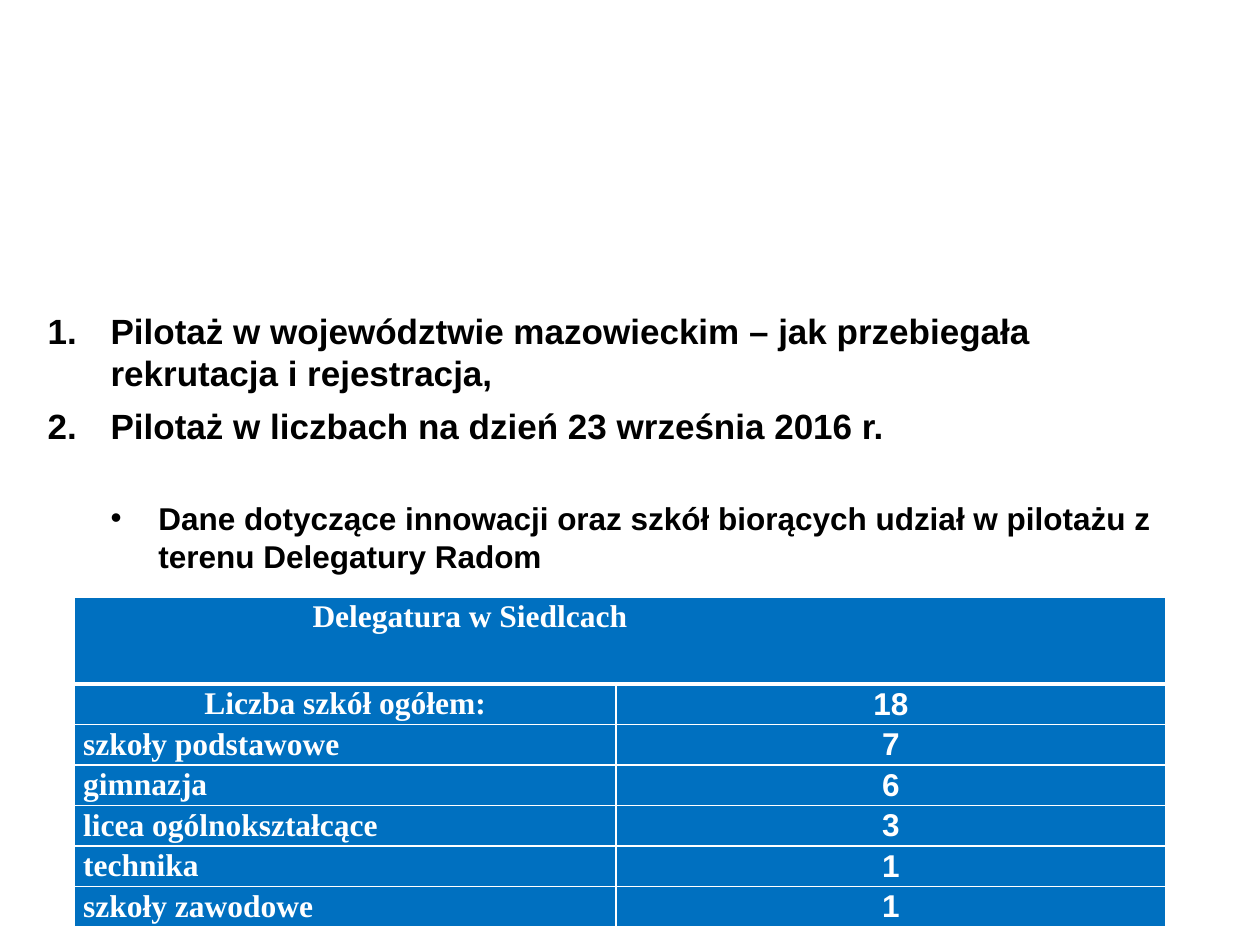
import pptx
import pptx.util
from lxml import etree
from pptx.dml.color import RGBColor
from pptx.enum.text import PP_ALIGN
from pptx.oxml.ns import qn
from pptx.util import Inches, Pt

BLACK = RGBColor(0x00, 0x00, 0x00)
WHITE = RGBColor(0xFF, 0xFF, 0xFF)
BLUE = RGBColor(0x00, 0x70, 0xC0)
SANS, SERIF = "Arial", "Times New Roman"


class SlideBuilder:
    def __init__(self, slide):
        self.slide = slide

    def add_text(self, paragraph, text, color, font, spacing):
        run = paragraph.add_run()
        run.text = text
        run.font.color.rgb = color
        for target, values in ((paragraph, spacing), (run.font, font)):
            for name, value in values.items():
                setattr(target, name, value)

    def agenda(self, left, top, width, height, items):
        frame = self.slide.shapes.add_textbox(
            Inches(left), Inches(top), Inches(width), Inches(height)).text_frame
        frame.word_wrap = True
        for index, (text, level, indent, hanging, marker, size, spacing) in enumerate(items):
            paragraph = frame.paragraphs[0] if index == 0 else frame.add_paragraph()
            properties = paragraph._p.get_or_add_pPr()
            properties.set("marL", str(Inches(indent)))
            properties.set("indent", str(-Inches(hanging)))
            tag, attribute, value = marker
            if tag == "a:buChar":
                etree.SubElement(properties, qn("a:buFont")).set("typeface", SANS)
            etree.SubElement(properties, qn(tag)).set(attribute, value)
            paragraph.level = level
            font = {"name": SANS, "size": Pt(size), "bold": True}
            self.add_text(paragraph, text, BLACK, font, spacing)

    def table(self, left, top, columns, rows):
        grid = self.slide.shapes.add_table(
            len(rows), len(columns), Inches(left), Inches(top),
            Inches(sum(columns)), Inches(sum(rows))).table
        for column, width in zip(grid.columns, columns):
            column.width = Inches(width)
        for row, height in zip(grid.rows, rows):
            row.height = Inches(height)
        return grid

    def cell_format(self, cell, bottom=1, top=1):
        margins = {"margin_left": 0.07, "margin_right": 0.07,
                   "margin_top": 0, "margin_bottom": 0}
        for name, value in margins.items():
            setattr(cell, name, Inches(value))
        properties = cell._tc.get_or_add_tcPr()
        for side, weight in (("L", 1), ("R", 1), ("T", top), ("B", bottom)):
            line = etree.SubElement(properties, qn(f"a:ln{side}"), w=str(Pt(weight)))
            fill = etree.SubElement(line, qn("a:solidFill"))
            etree.SubElement(fill, qn("a:srgbClr"), val=str(WHITE))
        cell.fill.solid()
        cell.fill.fore_color.rgb = BLUE

    def cell_text(self, paragraph, text, typeface, alignment):
        font = {"name": typeface, "size": Pt(18), "bold": True}
        spacing = {"alignment": alignment, "line_spacing": 1.07}
        self.add_text(paragraph, text, WHITE, font, spacing)


def main():
    deck = pptx.Presentation()
    deck.slide_width, deck.slide_height = Inches(10), Inches(7.5)
    builder = SlideBuilder(deck.slides.add_slide(deck.slide_layouts[6]))

    # Agenda
    number = ("a:buAutoNum", "type", "arabicPeriod")
    bullet = ("a:buChar", "char", "•")
    after = {"space_after": Pt(6)}
    builder.agenda(0.28, 2.41, 9.13, 3.57, [
        ("Pilotaż w województwie mazowieckim – jak przebiegała rekrutacja i rejestracja,",
         0, 0.5, 0.5, number, 20, after),
        ("Pilotaż w liczbach na dzień 23 września 2016 r.", 0, 0.5, 0.5, number, 20, after),
        ("Dane dotyczące innowacji oraz szkół biorących udział w pilotażu z terenu "
         "Delegatury Radom", 1, 0.88, 0.38, bullet, 18, {"space_before": Pt(24)}),
    ])

    # School counts
    schools = [
        ("Liczba szkół ogółem:", 18), ("szkoły podstawowe", 7), ("gimnazja", 6),
        ("licea ogólnokształcące", 3), ("technika", 1), ("szkoły zawodowe", 1),
    ]
    counts = builder.table(0.59, 4.74, [4.3, 4.36], [0.69] + [0.3] * len(schools))

    # Merged heading, centred on a tab stop
    heading = counts.cell(0, 0)
    heading.merge(counts.cell(0, 1))
    for cell in counts.rows[0].cells:
        builder.cell_format(cell, bottom=3)
    title = heading.text_frame.paragraphs[0]
    tabs = etree.SubElement(title._p.get_or_add_pPr(), qn("a:tabLst"))
    for position, kind in ((0.68, "l"), (3.07, "ctr")):
        etree.SubElement(tabs, qn("a:tab"), pos=str(Inches(position)), algn=kind)
    builder.cell_text(title, "\t\tDelegatura w Siedlcach", SERIF, PP_ALIGN.LEFT)

    # Total first, then one row per school type
    for index, (school, count) in enumerate(schools, start=1):
        label, value = counts.rows[index].cells
        label_side = PP_ALIGN.CENTER if index == 1 else PP_ALIGN.LEFT
        for cell, text, typeface, side in ((label, school, SERIF, label_side),
                                           (value, str(count), SANS, PP_ALIGN.CENTER)):
            builder.cell_format(cell, top=3 if index == 1 else 1)
            builder.cell_text(cell.text_frame.paragraphs[0], text, typeface, side)

    deck.save("out.pptx")


if __name__ == "__main__":
    main()
